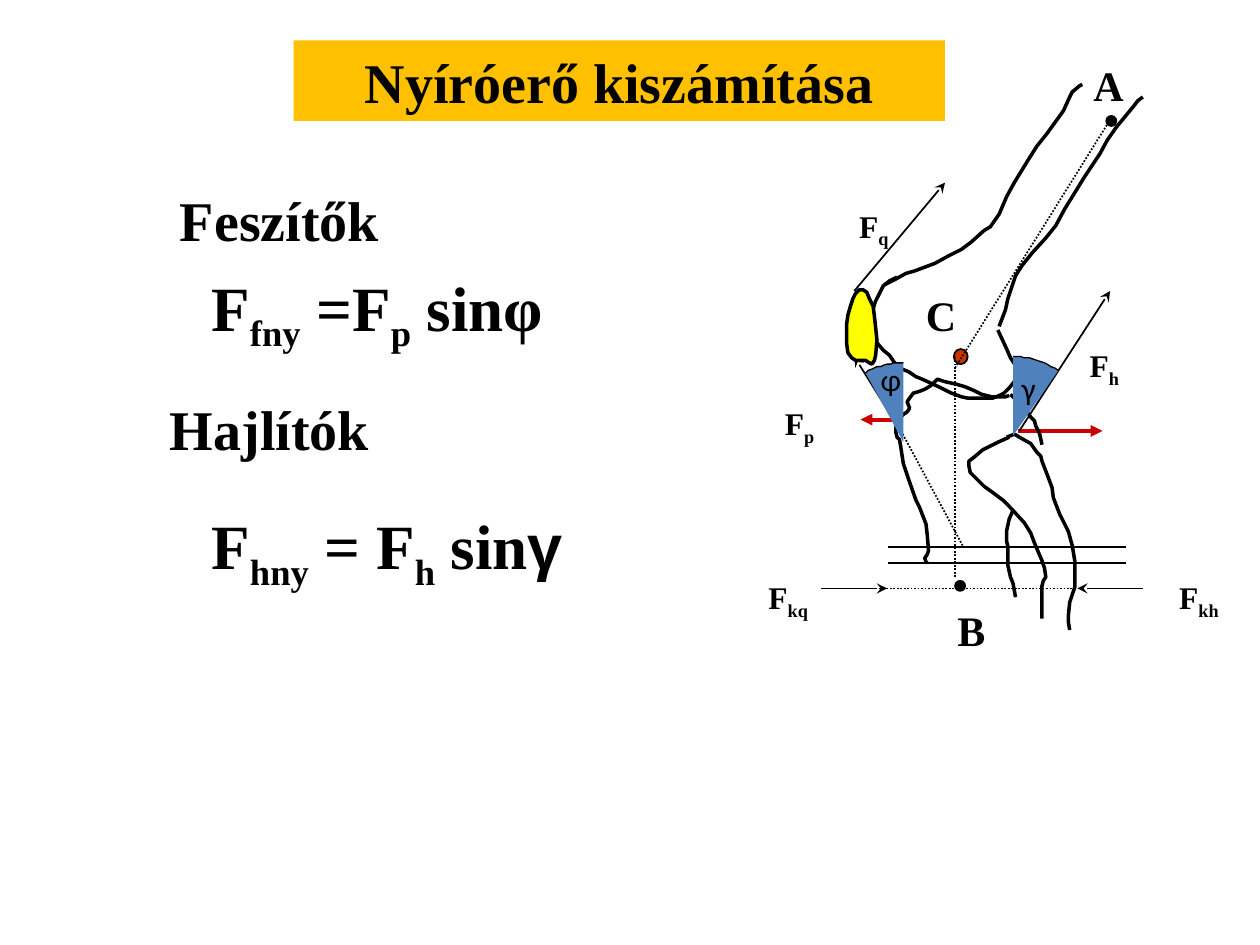
import math
from dataclasses import dataclass
from typing import NamedTuple, Optional

import lxml.etree
import pptx
import pptx.dml.color
import pptx.enum.dml
import pptx.enum.shapes
import pptx.enum.text
import pptx.oxml.ns
import pptx.util

COLUMNS, ROWS = 1000, 750  # grid that covers the slide
CELL = pptx.util.Inches(10) // COLUMNS
BLACK, RED, BLUE, ORANGE, YELLOW = "000000", "CC0000", "4F81BD", "FFC000", "FFFF00"
SERIF = "Times New Roman"
DOTTED = pptx.enum.dml.MSO_LINE.ROUND_DOT


class Piece(NamedTuple):
    text: str
    subscript: bool = False
    font: str = SERIF


class Box(NamedTuple):
    column: float
    row: float
    width: float
    height: float


@dataclass
class Label:
    box: Box
    pieces: list[Piece]
    size: float
    bold: bool = True


@dataclass
class Segment:
    start: tuple[float, float]
    end: tuple[float, float]
    colour: str = BLACK
    width: float = 1
    dotted: bool = False
    arrow: Optional[str] = None


@dataclass
class Dot:
    box: Box
    colour: str


@dataclass
class Wedge:
    apex: tuple[float, float]
    radius: float
    first_angle: float  # degrees clockwise from vertical
    last_angle: float


def force(subscript: str) -> list[Piece]:
    return [Piece("F"), Piece(subscript, True)]


HEADINGS = [
    Label(Box(133, 142, 442, 63), [Piece("Feszítők")], 32),
    Label(Box(125, 308, 442, 63), [Piece("Hajlítók")], 32),
    Label(Box(158, 208, 350, 70),
          [*force("fny"), Piece(" =F"), Piece("p", True), Piece(" sinφ")], 36),
    Label(Box(158, 397, 392, 70),
          [*force("hny"), Piece(" = F"), Piece("h", True), Piece(" sin"),
           Piece("γ", font="Arial")], 36),
]
POINT_LABELS = [
    Label(Box(column, row, 58, 50), [Piece(name)], 24)
    for name, column, row in (("C", 725, 225), ("A", 858, 42), ("B", 750, 475))
]
FORCE_LABELS = [
    Label(Box(column, row, 65, 40), force(name), 18)
    for name, column, row in (("p", 613, 316), ("q", 672, 159), ("kq", 600, 454),
                              ("h", 855, 270), ("kh", 926, 454))
]
ANGLE_LABELS = [
    Label(Box(689, 281, 32, 40), [Piece("φ", font="Calibri")], 18, False),
    Label(Box(801, 288, 39, 40), [Piece("γ", font="Calibri")], 18, False),
]
SEGMENTS = [
    Segment((711, 336), (678, 283), arrow="stealth"),
    Segment((698, 467), (855, 467), dotted=True),
    Segment((708, 333), (683, 333), RED, 2.25, arrow="triangle"),
    Segment((808, 342), (875, 342), RED, 2.25, arrow="triangle"),
    Segment((758, 292), (883, 92), dotted=True),
    Segment((706, 325), (764, 433), dotted=True),
    Segment((758, 283), (758, 458), dotted=True),
    Segment((678, 231), (750, 145), arrow="stealth"),
    Segment((652, 467), (704, 467), arrow="stealth"),
    Segment((907, 467), (855, 467), arrow="stealth"),
    Segment((809, 342), (881, 231), arrow="stealth"),
    *(Segment((705, row), (894, row)) for row in (434, 447)),
]
DOTS = [Dot(Box(757, 277, 11, 12), "CC3300"), Dot(Box(878, 92, 8, 8), BLACK),
        Dot(Box(758, 461, 8, 8), BLACK)]
WEDGES = [Wedge((717, 351), 63, -28.5, 0), Wedge((804, 346), 63, 0, 34.5)]

FIBULA_FRONT = [
    (801, 347), (792, 351), (780, 357), (773, 363), (769, 366), (769, 370), (770, 375),
    (776, 381), (781, 386), (788, 391), (796, 397), (802, 403), (813, 415), (818, 423),
    (821, 431), (827, 445), (829, 451), (830, 458), (828, 461), (827, 465), (827, 491)]
CALF_BACK = [
    (799, 347), (804, 345), (806, 345), (809, 347), (818, 352), (823, 359), (826, 362),
    (827, 366), (832, 379), (835, 387), (836, 395), (841, 408), (846, 418), (848, 422),
    (851, 433), (853, 445), (853, 466), (851, 472), (849, 478), (848, 488), (848, 494),
    (849, 500)]
TENDON = [
    (802, 313), (807, 318), (814, 325), (818, 331), (821, 334), (822, 338), (825, 344),
    (827, 353)]
TIBIA_FRONT = [
    (801, 314), (798, 315), (787, 315), (779, 313), (773, 310), (766, 307), (759, 305),
    (750, 303), (744, 301), (742, 303), (739, 306), (734, 309), (729, 311), (725, 312),
    (722, 316), (720, 319), (722, 324), (720, 327), (717, 329), (714, 332), (713, 336),
    (711, 339), (711, 343), (712, 347), (714, 349), (715, 355), (717, 368), (721, 380),
    (727, 397), (730, 403), (735, 416), (736, 425), (737, 437), (736, 440), (734, 443),
    (735, 446), (736, 447)]
TIBIA_BACK = [
    (804, 405), (801, 412), (799, 421), (799, 430), (800, 434), (800, 449), (802, 458),
    (804, 463), (806, 474)]
FEMUR_END = [
    (712, 220), (706, 223), (701, 227), (698, 233), (695, 239), (693, 245), (693, 268),
    (696, 272), (701, 278), (706, 282), (710, 288), (716, 293), (721, 295), (727, 299),
    (732, 301), (745, 307), (755, 312), (763, 315), (768, 316), (788, 316), (793, 314),
    (797, 312), (801, 308), (805, 303), (807, 300), (807, 296), (806, 290), (802, 284),
    (799, 277), (792, 262)]
THIGH_FRONT = [
    (702, 226), (710, 222), (719, 217), (726, 215), (742, 209), (753, 203), (763, 198),
    (771, 192), (781, 183), (786, 180), (793, 170), (799, 156), (805, 145), (816, 127),
    (823, 116), (831, 106), (844, 88), (849, 77), (851, 73), (857, 68), (859, 67)]
THIGH_BACK = [
    (793, 259), (798, 246), (800, 237), (803, 228), (806, 219), (811, 211), (819, 201),
    (830, 189), (838, 179), (845, 166), (853, 153), (861, 140), (873, 122), (879, 111),
    (886, 101), (900, 84), (903, 80), (907, 77)]
KNEECAP = [
    (682, 230), (679, 233), (677, 237), (675, 243), (673, 250), (672, 257), (672, 273),
    (673, 280), (676, 284), (679, 286), (684, 286), (687, 286), (690, 288), (692, 289),
    (694, 286), (695, 282), (696, 270), (695, 260), (694, 251), (693, 243), (690, 237),
    (688, 232), (685, 230)]
BONES = [FIBULA_FRONT, CALF_BACK, TENDON, TIBIA_FRONT, TIBIA_BACK, FEMUR_END,
         THIGH_FRONT, THIGH_BACK]


def colour_of(code: str) -> pptx.dml.color.RGBColor:
    return pptx.dml.color.RGBColor.from_string(code)


def style(shape, fill: Optional[str], line_width: float) -> None:
    """Give a shape a fill and a black line; None and 0 leave them out."""
    shape.shadow.inherit = False
    if fill:
        shape.fill.solid()
        shape.fill.fore_color.rgb = colour_of(fill)
    else:
        shape.fill.background()
    if line_width:
        shape.line.color.rgb = colour_of(BLACK)
        shape.line.width = pptx.util.Pt(line_width)
    else:
        shape.line.fill.background()


def write(shape, label: Label) -> None:
    shape.text_frame.word_wrap = True
    paragraph = shape.text_frame.paragraphs[0]
    for piece in label.pieces:
        run = paragraph.add_run()
        run.text = piece.text
        run.font.name, run.font.size = piece.font, pptx.util.Pt(label.size)
        run.font.bold = label.bold
        run.font.color.rgb = colour_of(BLACK)
        if piece.subscript:
            run.font._element.set("baseline", "-25000")


def draw_label(slide, label: Label) -> None:
    write(slide.shapes.add_textbox(*(CELL * value for value in label.box)), label)


def draw_preset(slide, kind, box: Box, fill: str, line_width: float):
    shape = slide.shapes.add_shape(kind, *(CELL * value for value in box))
    style(shape, fill, line_width)
    return shape


def draw_segment(slide, segment: Segment) -> None:
    ends = (CELL * value for value in segment.start + segment.end)
    connector = slide.shapes.add_connector(pptx.enum.shapes.MSO_CONNECTOR.STRAIGHT, *ends)
    connector.line.color.rgb = colour_of(segment.colour)
    connector.line.width = pptx.util.Pt(segment.width)
    if segment.dotted:
        connector.line.dash_style = DOTTED
    if segment.arrow:
        lxml.etree.SubElement(connector.line._get_or_add_ln(),
                              pptx.oxml.ns.qn("a:tailEnd"), type=segment.arrow)
    lxml.etree.SubElement(connector._element.spPr, pptx.oxml.ns.qn("a:effectLst"))


def draw_outline(slide, points, fill: Optional[str] = None, line_width: float = 2) -> None:
    """Draw a line through the points; a filled outline is closed."""
    builder = slide.shapes.build_freeform(*points[0], scale=CELL)
    builder.add_line_segments(points[1:], close=fill is not None)
    style(builder.convert_to_shape(), fill, line_width)


def draw_wedge(slide, wedge: Wedge, steps: int = 12) -> None:
    sweep = wedge.last_angle - wedge.first_angle
    angles = [math.radians(wedge.first_angle + sweep * step / steps)
              for step in range(steps + 1)]
    arc = [(wedge.apex[0] + wedge.radius * math.sin(angle),
            wedge.apex[1] - wedge.radius * math.cos(angle)) for angle in angles]
    draw_outline(slide, [wedge.apex, *arc], BLUE, 0)
    draw_outline(slide, arc, line_width=0.75)


def main() -> None:
    presentation = pptx.Presentation()
    presentation.slide_width, presentation.slide_height = CELL * COLUMNS, CELL * ROWS
    slide = presentation.slides.add_slide(presentation.slide_layouts[6])
    presets = pptx.enum.shapes.MSO_SHAPE
    title_box = Box(233, 32, 517, 64)
    title = draw_preset(slide, presets.RECTANGLE, title_box, ORANGE, 0)
    write(title, Label(title_box, [Piece("Nyíróerő kiszámítása")], 32))
    title.text_frame.paragraphs[0].alignment = pptx.enum.text.PP_ALIGN.CENTER
    for label in HEADINGS + POINT_LABELS + FORCE_LABELS:
        draw_label(slide, label)
    for dot in DOTS:
        draw_preset(slide, presets.OVAL, dot.box, dot.colour, 1)
    for segment in SEGMENTS:
        draw_segment(slide, segment)
    for bone in BONES:
        draw_outline(slide, bone)
    draw_outline(slide, KNEECAP, YELLOW)
    for wedge in WEDGES:
        draw_wedge(slide, wedge)
    for label in ANGLE_LABELS:
        draw_label(slide, label)
    presentation.save("out.pptx")


if __name__ == "__main__":
    main()
